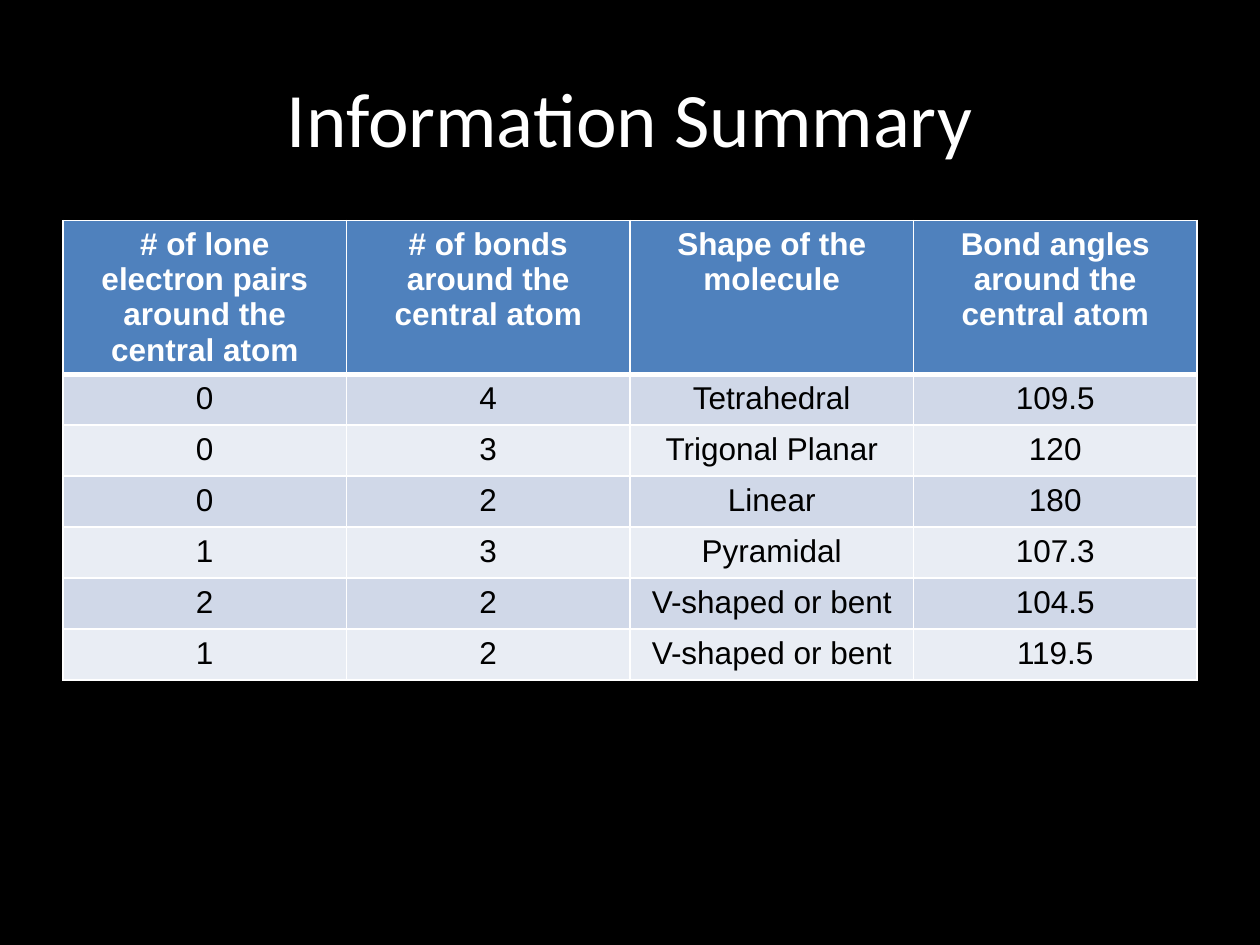
from lxml import etree
from pptx import Presentation
from pptx import util as u
from pptx.dml.color import RGBColor
from pptx.enum import text
from pptx.oxml import ns

BLACK = RGBColor(0x00, 0x00, 0x00)
WHITE = RGBColor(0xFF, 0xFF, 0xFF)
BLUE = RGBColor(0x4F, 0x81, 0xBD)
BANDS = [RGBColor(0xD0, 0xD8, 0xE8), RGBColor(0xE9, 0xED, 0xF4)]

ROWS = [
    ["# of lone electron pairs around the central atom",
     "# of bonds around the central atom",
     "Shape of the molecule",
     "Bond angles around the central atom"],
    ["0", "4", "Tetrahedral", "109.5"],
    ["0", "3", "Trigonal Planar", "120"],
    ["0", "2", "Linear", "180"],
    ["1", "3", "Pyramidal", "107.3"],
    ["2", "2", "V-shaped or bent", "104.5"],
    ["1", "2", "V-shaped or bent", "119.5"],
]


class Deck:
    """Holds the style and the current slide."""

    def __init__(self):
        self.prs = Presentation()
        self.prs.slide_width = u.Inches(10)
        self.prs.slide_height = u.Inches(7.5)
        self.slide = self.prs.slides.add_slide(self.prs.slide_layouts[5])
        fill = self.slide.background.fill
        fill.solid()
        fill.fore_color.rgb = BLACK

    def label(self, frame, words, face, size, color, bold=False):
        frame.text = words
        frame.paragraphs[0].alignment = text.PP_ALIGN.CENTER
        font = frame.paragraphs[0].runs[0].font
        font.name, font.size, font.bold = face, u.Pt(size), bold
        font.color.rgb = color

    def title(self, words, left, top, width, height):
        box = self.slide.shapes.title
        box.left, box.top = u.Inches(left), u.Inches(top)
        box.width, box.height = u.Inches(width), u.Inches(height)
        box.text_frame.vertical_anchor = text.MSO_ANCHOR.MIDDLE
        self.label(box.text_frame, words, "Calibri", 44, WHITE)

    def border(self, cell, **widths):
        """Draw white sides, with widths in points in the order L, R, T, B."""
        props = cell._tc.get_or_add_tcPr()
        for side, width in widths.items():
            line = etree.SubElement(props, ns.qn("a:ln" + side), w=str(u.Pt(width)))
            paint = etree.SubElement(line, ns.qn("a:solidFill"))
            etree.SubElement(paint, ns.qn("a:srgbClr"), val=str(WHITE))

    def table(self, rows, left, top, width, height, head):
        """Add a banded table whose first row has the height head."""
        grid = self.slide.shapes.add_table(
            len(rows), len(rows[0]), u.Inches(left), u.Inches(top),
            u.Inches(width), u.Inches(height)).table
        for r, row in enumerate(rows):
            first = r == 0
            tall = head if first else (height - head) / (len(rows) - 1)
            grid.rows[r].height = u.Inches(tall)
            for c, words in enumerate(row):
                cell = grid.cell(r, c)
                self.border(cell, L=1, R=1, T=3 if r == 1 else 1, B=3 if first else 1)
                cell.fill.solid()
                cell.fill.fore_color.rgb = BLUE if first else BANDS[(r - 1) % 2]
                self.label(cell.text_frame, words, "Arial", 18,
                           WHITE if first else BLACK, first)


def main():
    deck = Deck()
    deck.title("Information Summary", 0.5, 0.3, 9, 1.25)
    deck.table(ROWS, 0.5, 1.75, 9, 3.43, head=1)
    deck.prs.save("out.pptx")


if __name__ == "__main__":
    main()
